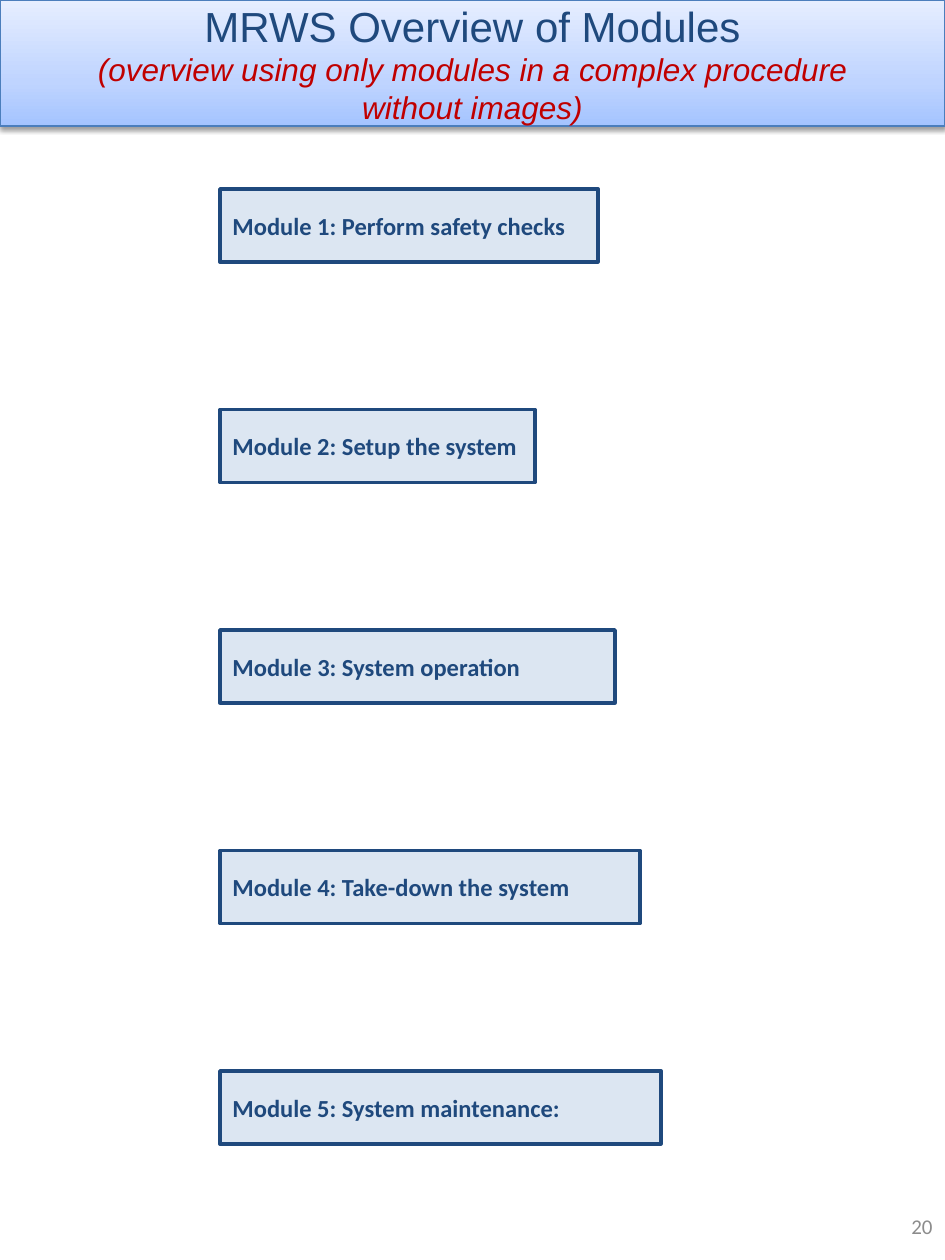
from lxml import etree
from pptx import Presentation, util as u
from pptx.dml.color import RGBColor
from pptx.enum import shapes, text
from pptx.oxml import ns

NAVY, RED, PALE, GREY = "1F497D", "C00000", "DCE6F2", "8C8C8C"
HEAD = [
    ("MRWS Overview of Modules", dict(size=24, color=NAVY)),
    ("(overview using only modules in a complex procedure",
     dict(size=18, color=RED, italic=True)),
    ("without images)", dict(size=18, color=RED, italic=True)),
]
MODULES = [
    ("Perform safety checks", 378),
    ("Setup the system", 315),
    ("System operation", 395),
    ("Take-down the system", 420),
    ("System maintenance:", 441),
]
STOPS = [(0, "A4C4FF"), (35, "BFD4FF"), (100, "E6EEFF")]
LEFT, TOP, STEP, HIGH = 220, 189, 220.5, 73


def px(n):
    return u.Emu(round(n * 914400 / 126))


def rgb(code):
    return RGBColor.from_string(code)


def place(item, *box):
    item.left, item.top, item.width, item.height = map(px, box)


def write(para, words, size=14, color=NAVY, face="Calibri", bold=False,
          italic=False, align=text.PP_ALIGN.LEFT):
    para.alignment = align
    run = para.add_run()
    run.text = words
    font = run.font
    font.name, font.size = face, u.Pt(size)
    font.bold, font.italic = bold, italic
    font.color.rgb = rgb(color)


def rect(x, y, w, h, line, width):
    item = slide.shapes.add_shape(shapes.MSO_SHAPE.RECTANGLE, *map(px, (x, y, w, h)))
    item.shadow.inherit = False
    item.line.color.rgb = rgb(line)
    item.line.width = u.Pt(width)
    return item


def node(up, tag, **attrs):
    return etree.SubElement(up, ns.qn("a:" + tag), {k: str(v) for k, v in attrs.items()})


def shade(item):
    item.fill.gradient()
    grad = item.element.spPr.find(ns.qn("a:gradFill"))
    stops = grad.find(ns.qn("a:gsLst"))
    for old in list(stops):
        stops.remove(old)
    for pos, color in STOPS:
        node(node(stops, "gs", pos=pos * 1000), "srgbClr", val=color)
    grad.find(ns.qn("a:lin")).set("ang", str(270 * 60000))
    cast = node(item.element.spPr.find(ns.qn("a:effectLst")), "outerShdw",
                blurRad=u.Pt(3.1), dist=u.Pt(1.6), dir=90 * 60000, rotWithShape=0)
    node(node(cast, "srgbClr", val="000000"), "alpha", val=38000)


deck = Presentation()
deck.slide_width, deck.slide_height = px(945), px(1260)
slide = deck.slides.add_slide(deck.slide_layouts[5])

title = slide.shapes.title
band = rect(0, 0, 945, 126, "4B7EBC", 0.75)
shade(band)
title.element.addprevious(band.element)

place(title, 0, -7, 945, 140)
frame = title.text_frame
frame.word_wrap = True
frame.auto_size = text.MSO_AUTO_SIZE.SHAPE_TO_FIT_TEXT
frame.vertical_anchor = text.MSO_ANCHOR.MIDDLE
for i, (words, style) in enumerate(HEAD):
    para = frame.add_paragraph() if i else frame.paragraphs[0]
    write(para, words, face="Arial", align=text.PP_ALIGN.CENTER, **style)

page = slide.shapes.add_textbox(*map(px, (725, 1193, 220, 67))).text_frame
page.word_wrap = True
page.vertical_anchor = text.MSO_ANCHOR.MIDDLE
write(page.paragraphs[0], "20", size=12, color=GREY, align=text.PP_ALIGN.RIGHT)

for i, (name, wide) in enumerate(MODULES):
    box = rect(LEFT, TOP + i * STEP, wide, HIGH, NAVY, 2)
    box.fill.solid()
    box.fill.fore_color.rgb = rgb(PALE)
    box.text_frame.word_wrap = True
    box.text_frame.vertical_anchor = text.MSO_ANCHOR.MIDDLE
    write(box.text_frame.paragraphs[0], f"Module {i + 1}: {name}", bold=True)

deck.save("out.pptx")
